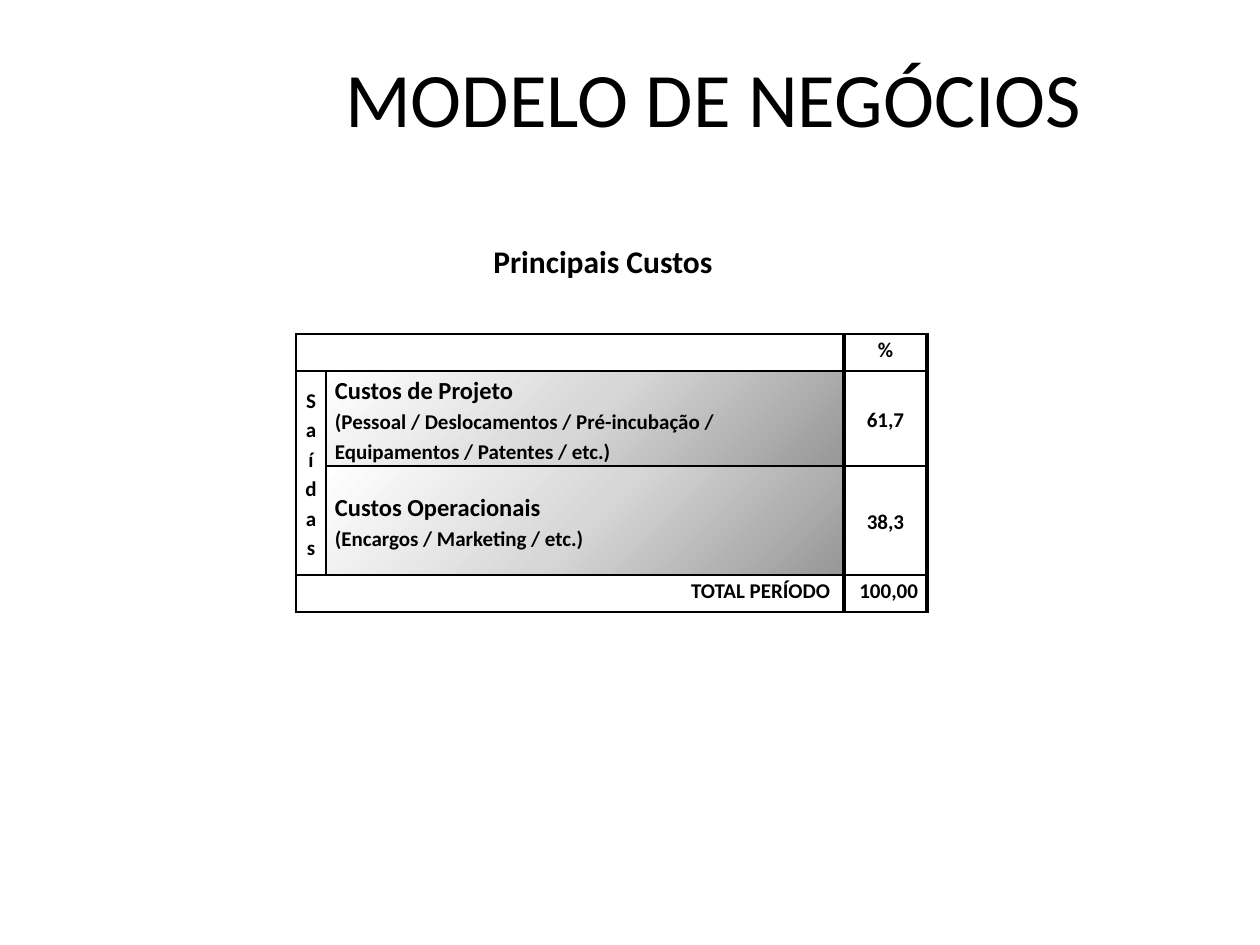
from lxml.etree import SubElement
from pptx import Presentation
from pptx.dml.color import RGBColor
from pptx.enum.text import MSO_ANCHOR, PP_ALIGN
from pptx.oxml.ns import qn
from pptx.util import Pt

PX = 914400 // 126
HUES = {"ink": "000000", "paper": "FFFFFF", "dark": "979797", "mid": "D7D7D7"}
LEFT, MID, RIGHT, JUST = PP_ALIGN.LEFT, PP_ALIGN.CENTER, PP_ALIGN.RIGHT, PP_ALIGN.JUSTIFY


def write(frame, lines, align, bold=True, space=None):
    frame.word_wrap = True
    for i, (text, size) in enumerate(lines):
        para = frame.paragraphs[0] if i == 0 else frame.add_paragraph()
        para.alignment = align
        para.line_spacing = space
        para.font.name = "Calibri"
        para.font.size = Pt(size)
        para.font.bold = bold
        para.font.color.rgb = RGBColor.from_string(HUES["ink"])
        if text:
            para.add_run().text = text


def paint(node, hue):
    SubElement(node, qn("a:srgbClr"), val=HUES[hue])


deck = Presentation()
deck.slide_width = 1260 * PX
deck.slide_height = 945 * PX
slide = deck.slides.add_slide(deck.slide_layouts[6])

heads = [
    ("MODELO DE NEGÓCIOS", 44, MID, False, (261, 18, 905, 157)),
    ("Principais Custos", 18, JUST, True, (481, 235, 328, 51)),
]
for text, size, align, bold, area in heads:
    box = slide.shapes.add_textbox(*[n * PX for n in area])
    box.text_frame.vertical_anchor = MSO_ANCHOR.MIDDLE
    write(box.text_frame, [(text, size)], align, bold)

cols = [30, 518, 83]
rows = [37, 95, 109, 37]
grid = slide.shapes.add_table(
    4, 3, 296 * PX, 334 * PX, sum(cols) * PX, sum(rows) * PX
).table
grid.first_row = grid.horz_banding = False
for col, width in zip(grid.columns, cols):
    col.width = width * PX
for row, height in zip(grid.rows, rows):
    row.height = height * PX

grid.cell(0, 0).merge(grid.cell(0, 1))
grid.cell(1, 0).merge(grid.cell(2, 0))
grid.cell(3, 0).merge(grid.cell(3, 1))

project = [
    ("Custos de Projeto", 14),
    ("(Pessoal / Deslocamentos / Pré-incubação / Equipamentos / Patentes / etc.)", 12),
]
running = [("Custos Operacionais", 14), ("(Encargos / Marketing / etc.)", 12)]
texts = {
    (0, 2): ([("%", 12)], MID),
    (1, 0): ([("Saídas", 12)], MID),
    (1, 1): (project, LEFT),
    (1, 2): ([("61,7", 12)], MID),
    (2, 1): (running, LEFT),
    (2, 2): ([("38,3", 12)], MID),
    (3, 0): ([("TOTAL PERÍODO ", 12)], RIGHT),
    (3, 2): ([("100,00", 12)], RIGHT),
}

for r in range(4):
    for c in range(3):
        cell = grid.cell(r, c)
        body = r in (1, 2)
        cell.margin_left = cell.margin_right = 9 * PX
        cell.margin_top = cell.margin_bottom = 0
        cell.vertical_anchor = MSO_ANCHOR.MIDDLE if body else MSO_ANCHOR.TOP
        lines, align = texts.get((r, c), ([("", 12)], LEFT))
        write(cell.text_frame, lines, align, space=1.15)

        props = cell._tc.get_or_add_tcPr()
        last = c == 1 or (c == 0 and not body)
        thick = {"L": c == 2, "R": c == 2 or last}
        for side in "LRTB":
            width = Pt(2.25 if thick.get(side) else 1)
            line = SubElement(props, qn("a:ln" + side), w=str(width))
            paint(SubElement(line, qn("a:solidFill")), "ink")

        if body and c == 1:
            fade = SubElement(props, qn("a:gradFill"), rotWithShape="1")
            stops = SubElement(fade, qn("a:gsLst"))
            for i, hue in enumerate(["dark", "mid", "paper"]):
                paint(SubElement(stops, qn("a:gs"), pos=str(i * 50000)), hue)
            SubElement(fade, qn("a:lin"), ang=str(225 * 60000), scaled="0")
        else:
            cell.fill.solid()
            cell.fill.fore_color.rgb = RGBColor.from_string(HUES["paper"])

deck.save("out.pptx")
